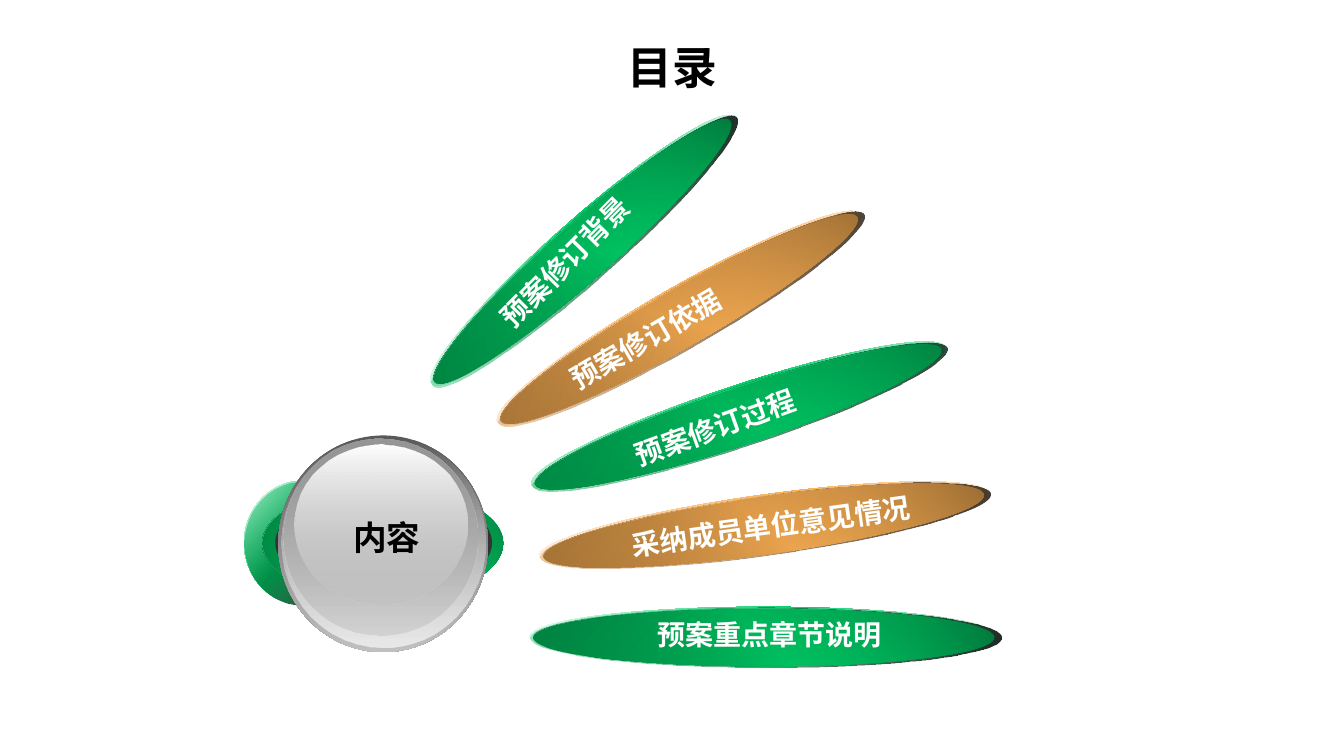
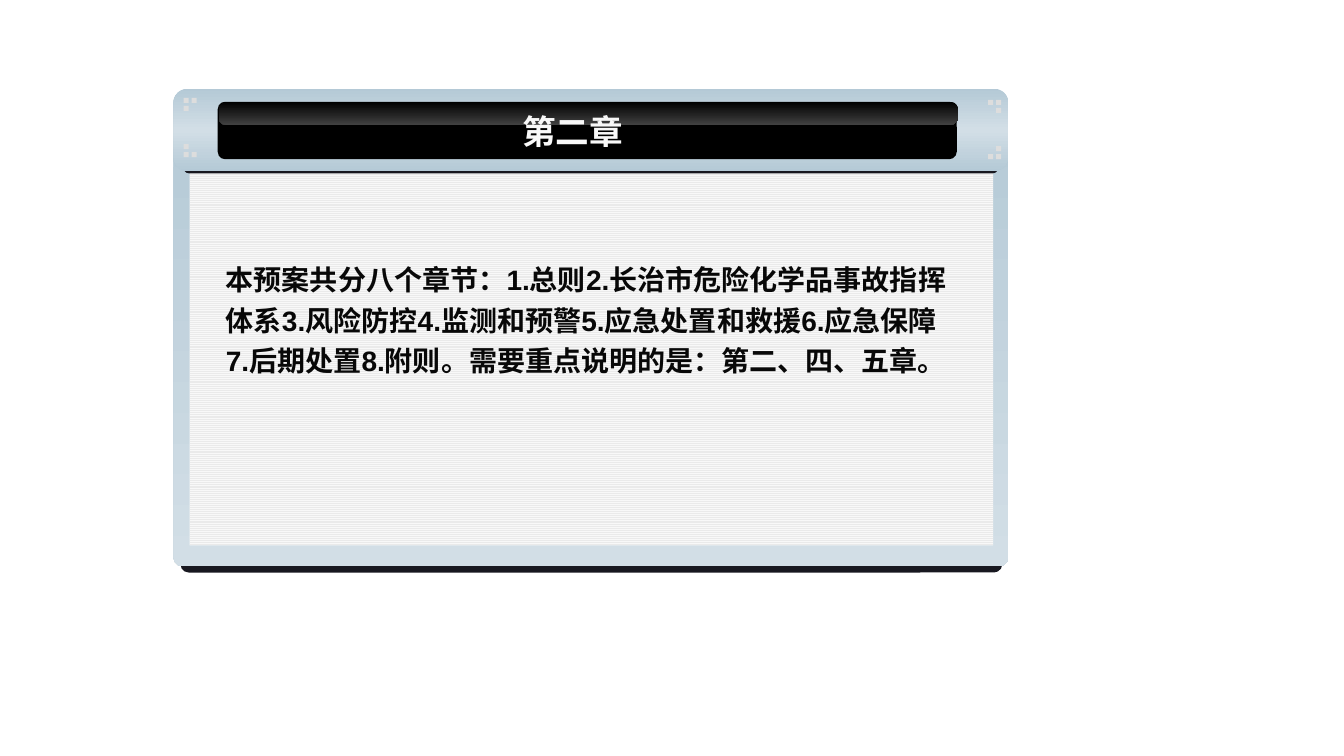
"""Builds a contents fan slide and a chapter panel slide."""
import dataclasses

import lxml.etree
import pptx
import pptx.dml.color
import pptx.enum.dml
import pptx.enum.shapes
import pptx.enum.text
import pptx.oxml.ns
import pptx.util

Inches = pptx.util.Inches
Shapes = pptx.enum.shapes.MSO_SHAPE
Align = pptx.enum.text.PP_ALIGN
Anchor = pptx.enum.text.MSO_ANCHOR
qn = pptx.oxml.ns.qn


@dataclasses.dataclass(frozen=True)
class Hue:
    base: str
    dark: str
    middle: str


@dataclasses.dataclass(frozen=True)
class Theme:
    font: str = "Arial"
    title_size: int = 32
    heading_size: int = 24
    text_size: int = 20
    white: str = "FFFFFF"
    black: str = "000000"
    green: Hue = Hue("00CC66", "006E37", "008241")
    orange: Hue = Hue("FAAF54", "875F2D", "9F6F35")
    silver: str = "C0C0C0"
    pale_silver: str = "E9E9E9"
    grey: str = "989898"
    dark_grey: str = "595959"
    hub_ring: str = "333333"
    steel: str = "B4C9D6"
    pale_steel: str = "D2DEE6"
    panel_shade: str = "181820"
    paper: str = "F8F8F8"
    paper_line: str = "EAEAEA"
    dot: str = "DDDDDD"
    bar_shine: str = "404040"
    body_text: str = "080808"


class Deck:
    """Holds the theme and the current slide and draws elements on it."""

    def __init__(self, theme):
        self.theme = theme
        self.presentation = pptx.Presentation()
        self.presentation.slide_width = Inches(13.33)
        self.presentation.slide_height = Inches(7.5)
        self.slide = None

    def new_slide(self, layout_index):
        layout = self.presentation.slide_layouts[layout_index]
        self.slide = self.presentation.slides.add_slide(layout)

    def shape(self, kind, box, fill=None, rotation=0, radius=None):
        shape = self.slide.shapes.add_shape(kind, *map(Inches, box))
        shape.shadow.inherit = False
        shape.line.fill.background()
        shape.rotation = rotation
        if radius is not None:
            shape.adjustments[0] = radius
        if fill:
            shape.fill.solid()
            shape.fill.fore_color.rgb = pptx.dml.color.RGBColor.from_string(fill)
        return shape

    def gradient(self, kind, box, stops, angle=90, rotation=0, radius=None):
        shape = self.shape(kind, box, rotation=rotation, radius=radius)
        shape.fill.gradient()
        shape.fill.gradient_angle = (360 - angle) % 360
        stop_list = shape._element.spPr.find(qn("a:gradFill")).find(qn("a:gsLst"))
        for old_stop in list(stop_list):
            stop_list.remove(old_stop)
        for position, color, *opacity in stops:
            stop = lxml.etree.SubElement(stop_list, qn("a:gs"), pos=str(position * 1000))
            color_node = lxml.etree.SubElement(stop, qn("a:srgbClr"), val=color)
            for percent in opacity:
                lxml.etree.SubElement(color_node, qn("a:alpha"), val=str(percent * 1000))

    def pattern(self, box):
        shape = self.shape(Shapes.RECTANGLE, box)
        shape.fill.patterned()
        shape.fill.pattern = pptx.enum.dml.MSO_PATTERN.LIGHT_HORIZONTAL
        color = pptx.dml.color.RGBColor.from_string
        shape.fill.fore_color.rgb = color(self.theme.paper_line)
        shape.fill.back_color.rgb = color(self.theme.paper)

    def rim(self, hue, box, rotation=0):
        left, top, width, height = box
        white = self.theme.white
        self.gradient(Shapes.OVAL, box, [(0, white), (50, hue.base), (100, white)],
                      45, rotation)
        self.gradient(Shapes.OVAL, (left + 0.01, top + 0.01, width + 0.02, height),
                      [(0, hue.base, 32), (100, self.theme.black, 90)], 45, rotation)

    def core(self, hue, box, rotation=0):
        self.gradient(Shapes.OVAL, box, [(0, hue.dark), (50, hue.base), (100, hue.dark)],
                      315, rotation)
        self.gradient(Shapes.OVAL, box, [(0, hue.middle), (100, hue.base, 0)],
                      45, rotation)

    def petal(self, hue, left, top, width, rotation):
        self.rim(hue, (left, top, width, 0.59), rotation)
        self.core(hue, (left + 0.04, top + 0.02, width - 0.08, 0.57), rotation)

    def hub(self):
        theme = self.theme
        self.rim(theme.green, (2.42, 4.77, 1.15, 1.23))
        self.core(theme.green, (2.6, 4.83, 2.39, 1.12))
        self.shape(Shapes.OVAL, (2.73, 4.86, 2.15, 1.05), theme.hub_ring)
        silver = theme.silver
        for box, *stops in (
            ((2.76, 4.32, 2.08, 2.15), (0, theme.dark_grey), (100, silver)),
            ((2.79, 4.33, 2.03, 2.09), (0, silver, 0), (100, theme.pale_silver)),
            ((2.81, 4.35, 1.93, 1.96), (0, theme.grey), (100, silver, 48)),
            ((2.92, 4.41, 1.72, 1.59), (0, theme.white), (100, silver, 38)),
        ):
            self.gradient(Shapes.OVAL, box, stops)

    def set_text(self, shape, text, size, color, align, anchor=Anchor.TOP, wrap=True):
        frame = shape.text_frame
        frame.text = text
        frame.word_wrap = wrap
        frame.auto_size = pptx.enum.text.MSO_AUTO_SIZE.NONE
        frame.vertical_anchor = anchor
        paragraph = frame.paragraphs[0]
        paragraph.alignment = align
        paragraph.space_before = pptx.util.Pt(0)
        font = paragraph.runs[0].font
        font.name, font.size, font.bold = self.theme.font, pptx.util.Pt(size), True
        font.color.rgb = pptx.dml.color.RGBColor.from_string(color)
        return paragraph

    def label(self, box, text, size, color, align=Align.LEFT, rotation=0):
        shape = self.slide.shapes.add_textbox(*map(Inches, box))
        shape.rotation = rotation
        self.set_text(shape, text, size, color, align, wrap=False)

    def place(self, placeholder, box):
        placeholder.left, placeholder.top, placeholder.width, placeholder.height = map(
            Inches, box)
        self.slide.shapes._spTree.append(placeholder._element)

    def title(self, box, text, size, color):
        placeholder = self.slide.shapes.title
        self.place(placeholder, box)
        self.set_text(placeholder, text, size, color, Align.CENTER, Anchor.MIDDLE)

    def body(self, box, text):
        placeholder = self.slide.placeholders[1]
        self.place(placeholder, box)
        paragraph = self.set_text(placeholder, text, self.theme.text_size,
                                  self.theme.body_text, Align.LEFT)
        paragraph.line_spacing = 1.2
        properties = paragraph._p.get_or_add_pPr()
        properties.set("marL", "0")
        properties.set("indent", "0")
        lxml.etree.SubElement(properties, qn("a:buNone"))

    def corner_dots(self, x, y, step_x, step_y):
        for left, top in ((x, y), (x + step_x, y), (x, y + step_y)):
            self.shape(Shapes.RECTANGLE, (left, top, 0.05, 0.05), self.theme.dot)


def contents_slide(deck):
    theme = deck.theme
    deck.new_slide(5)
    deck.title((1.67, 0.25, 10, 0.83), "目录", theme.title_size, theme.black)
    deck.hub()
    petals = (
        ((3.78, 2.19, 3.99, 318.5), "预案修订背景", (4.67, 2.37, 1.88, 0.44), 314.6),
        ((4.66, 2.86, 4.15, 330.2), "预案修订依据", (5.47, 3.14, 1.88, 0.44), 329.7),
        ((5.16, 3.83, 4.32, 341.6), "预案修订过程", (6.16, 4.02, 1.88, 0.44), 340.2),
        ((5.33, 4.91, 4.49, 352), "采纳成员单位意见情况", (6.16, 5, 2.99, 0.44), 352.1),
        ((5.25, 6.02, 4.65, 0), "预案重点章节说明", (6.42, 6.08, 2.43, 0.44), 0),
    )
    for index, (petal, text, box, rotation) in enumerate(petals):
        deck.petal((theme.green, theme.orange)[index % 2], *petal)
        deck.label(box, text, theme.text_size, theme.white, rotation=rotation)
    deck.label((3.4, 5.08, 0.87, 0.5), "内容", theme.heading_size, theme.black,
               Align.CENTER)


def chapter_slide(deck):
    theme = deck.theme
    rounded = Shapes.ROUNDED_RECTANGLE
    deck.new_slide(1)
    deck.shape(rounded, (1.79, 1.6, 8.15, 4.08), theme.panel_shade, radius=0.02)
    deck.gradient(rounded, (1.72, 1.05, 8.28, 4.57),
                  [(0, theme.steel), (100, theme.pale_steel)], radius=0.02)
    deck.pattern((1.88, 1.52, 7.97, 3.89))
    deck.shape(rounded, (1.82, 1.4, 8.08, 0.32), theme.panel_shade, radius=0.17)
    deck.gradient(rounded, (1.72, 0.88, 8.28, 0.82),
                  [(0, theme.steel), (50, theme.pale_steel), (100, theme.steel)],
                  radius=0.17)
    for x, step_x, top, bottom in ((1.82, 0.08, 0.97, 1.51), (9.88, -0.08, 0.99, 1.53)):
        deck.corner_dots(x, top, step_x, 0.08)
        deck.corner_dots(x, bottom, step_x, -0.08)
    deck.shape(rounded, (2.16, 1.01, 7.33, 0.57), theme.black, radius=0.13)
    deck.gradient(rounded, (2.17, 1.01, 7.33, 0.23),
                  [(0, theme.black), (100, theme.bar_shine)], radius=0.31)
    deck.title((2.33, 1.05, 6.7, 0.5), "第二章", theme.heading_size, theme.paper)
    deck.body((2.14, 2.49, 7.35, 1.71),
              "本预案共分八个章节：1.总则2.长治市危险化学品事故指挥体系3.风险防控"
              "4.监测和预警5.应急处置和救援6.应急保障7.后期处置8.附则。"
              "需要重点说明的是：第二、四、五章。")


def main():
    deck = Deck(Theme())
    contents_slide(deck)
    chapter_slide(deck)
    deck.presentation.save("out.pptx")


if __name__ == "__main__":
    main()
